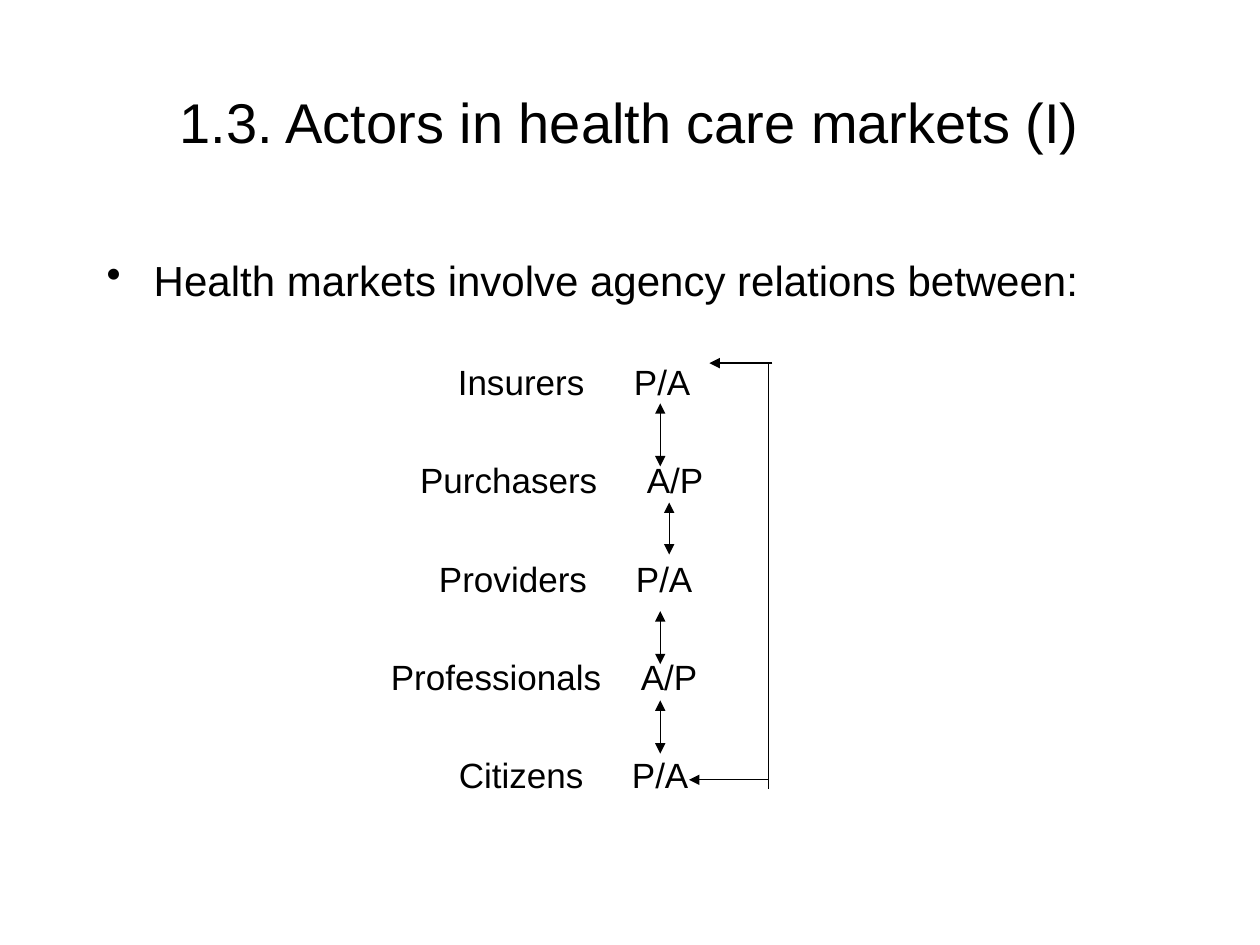
import pptx
import pptx.dml.color
import pptx.enum.shapes
import pptx.enum.text
import pptx.oxml.ns
import pptx.util
from lxml import etree
from pptx.util import Cm

BLACK = pptx.dml.color.RGBColor(0, 0, 0)
FONT = "Arial"
ROW_TOP = 7.27
ROW_PITCH = 1.98
ROW_HEIGHT = 0.9
ACTORS = [
    ("Insurers", 9.23, "P/A", 12.78),
    ("Purchasers", 8.47, "A/P", 13.04),
    ("Providers", 8.85, "P/A", 12.82),
    ("Professionals", 7.88, "A/P", 12.92),
    ("Citizens", 9.25, "P/A", 12.74),
]
AGENCY_ARROWS = [
    (13.31, 8.13, 9.4),
    (13.49, 10.13, 11.18),
    (13.31, 12.32, 13.39),
    (13.31, 14.12, 15.19),
]
BRACKET_X = 15.49


def add_text(page, text, left, top, width, height, *, size, inset=0.0,
             align=pptx.enum.text.PP_ALIGN.LEFT,
             anchor=pptx.enum.text.MSO_ANCHOR.TOP, bullet=None, indent=0.0):
    box = page.shapes.add_textbox(Cm(left), Cm(top), Cm(width), Cm(height))
    frame = box.text_frame
    frame.word_wrap = True
    frame.vertical_anchor = anchor
    frame.margin_left = frame.margin_right = Cm(inset)
    frame.margin_top = frame.margin_bottom = Cm(inset / 2)
    para = frame.paragraphs[0]
    para.alignment = align
    span = para.add_run()
    span.text = text
    span.font.name = FONT
    span.font.size = pptx.util.Pt(size)
    span.font.color.rgb = BLACK
    if bullet:
        properties = para._p.get_or_add_pPr()
        properties.set("marL", str(Cm(indent)))
        properties.set("indent", str(-Cm(indent)))
        mark = etree.SubElement(properties, pptx.oxml.ns.qn("a:buChar"))
        mark.set("char", bullet)
    return box


def add_line(page, start, end, *, head=False, tail=False):
    line = page.shapes.add_connector(
        pptx.enum.shapes.MSO_CONNECTOR.STRAIGHT,
        Cm(start[0]), Cm(start[1]), Cm(end[0]), Cm(end[1]))
    line.line.color.rgb = BLACK
    line.line.width = pptx.util.Pt(0.75)
    outline = line.line._get_or_add_ln()
    for tag, wanted in (("a:headEnd", head), ("a:tailEnd", tail)):
        if wanted:
            arrowhead = etree.SubElement(outline, pptx.oxml.ns.qn(tag))
            arrowhead.set("type", "triangle")
    etree.SubElement(line._element.spPr, pptx.oxml.ns.qn("a:effectLst"))
    return line


def add_actors(page):
    for row, (actor, actor_left, role, role_left) in enumerate(ACTORS):
        top = ROW_TOP + row * ROW_PITCH
        add_text(page, actor, actor_left, top, 4.6, ROW_HEIGHT, size=20)
        add_text(page, role, role_left, top, 1.6, ROW_HEIGHT, size=20)


def add_relations(page):
    for x, top, bottom in AGENCY_ARROWS:
        add_line(page, (x, top), (x, bottom), head=True, tail=True)
    add_line(page, (13.89, 15.72), (BRACKET_X, 15.72), head=True)
    add_line(page, (BRACKET_X, 15.9), (BRACKET_X, 7.32))
    add_line(page, (15.57, 7.32), (14.3, 7.32), tail=True)


def main():
    deck = pptx.Presentation()
    deck.slide_width = Cm(25.4)
    deck.slide_height = Cm(19.05)
    page = deck.slides.add_slide(deck.slide_layouts[6])
    add_text(page, "1.3. Actors in health care markets (I)",
             1.27, 0.76, 22.86, 3.35, size=32, inset=0.25,
             align=pptx.enum.text.PP_ALIGN.CENTER,
             anchor=pptx.enum.text.MSO_ANCHOR.MIDDLE)
    add_text(page, "Health markets involve agency relations between:",
             1.9, 5.01, 21.59, 1.3, size=24, inset=0.25,
             bullet="•", indent=0.95)
    add_actors(page)
    add_relations(page)
    deck.save("out.pptx")


if __name__ == "__main__":
    main()
